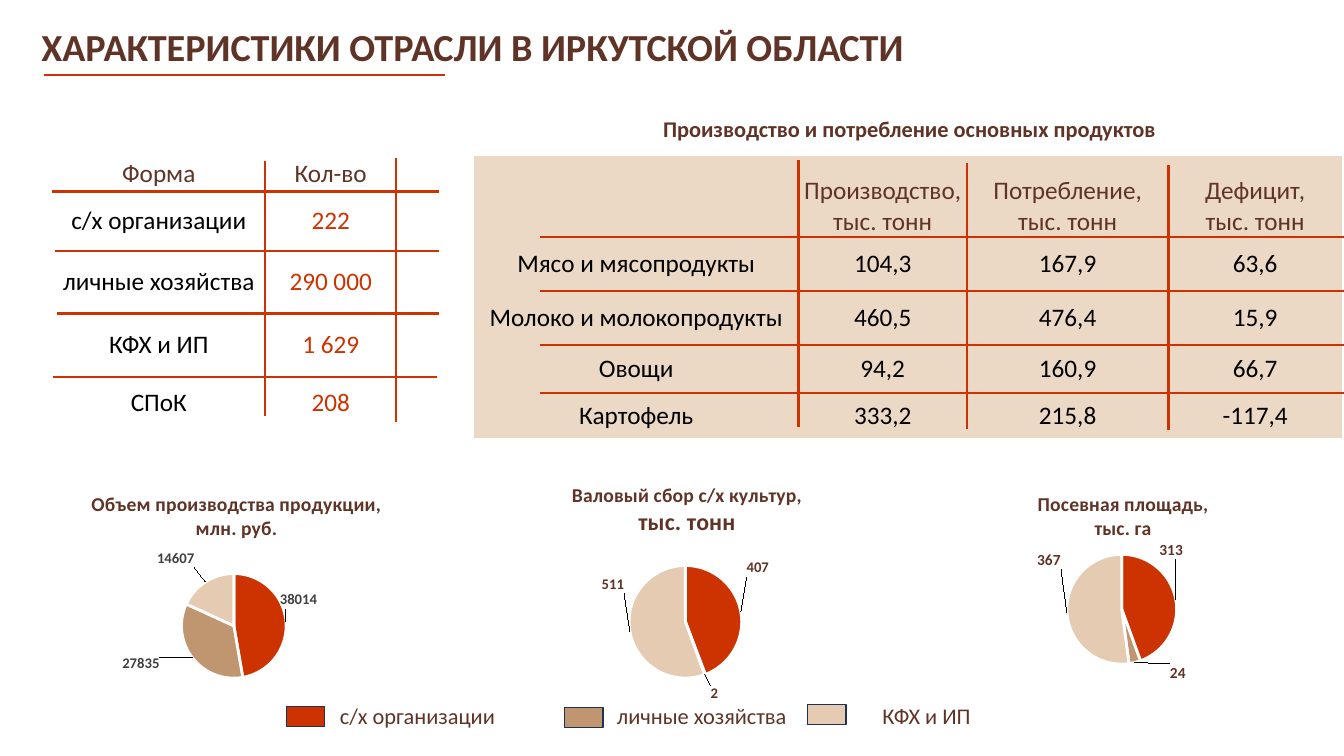
from lxml import etree
from pptx import Presentation
from pptx.chart.data import CategoryChartData
from pptx.dml.color import RGBColor
from pptx.enum.chart import XL_CHART_TYPE as ChartType, XL_LABEL_POSITION as LabelPosition
from pptx.enum.shapes import MSO_CONNECTOR as Connector, MSO_SHAPE as Shape
from pptx.enum.text import MSO_ANCHOR as Anchor, MSO_AUTO_SIZE as AutoSize, PP_ALIGN as Align
from pptx.oxml.ns import qn
from pptx.util import Inches, Pt

FONT = "Calibri"
BROWN = RGBColor(0x5F, 0x34, 0x27)
RED = RGBColor(0xCC, 0x33, 0x00)
TAN = RGBColor(0xC0, 0x96, 0x70)
CREAM = RGBColor(0xE4, 0xCB, 0xB1)
BEIGE = RGBColor(0xEB, 0xD8, 0xC5)
NAVY = RGBColor(0x1E, 0x32, 0x56)
GRAY = RGBColor(0x40, 0x40, 0x40)
BLACK = RGBColor(0, 0, 0)
WHITE = RGBColor(255, 255, 255)
SLICE_COLORS = [RED, TAN, CREAM]
NO_TABLE_STYLE = "{2D5ABB26-0587-4C30-8999-92F81FD0307C}"

FORMS = [
    ["Форма", "Кол-во", ""],
    ["с/х организации", "222", ""],
    ["личные хозяйства", "290 000", ""],
    ["КФХ и ИП", "1 629", ""],
    ["СПоК", "208", ""],
]
PRODUCTS = [
    ["", "Производство,\nтыс. тонн", "Потребление,\nтыс. тонн", "Дефицит,\nтыс. тонн"],
    ["Мясо и мясопродукты", "104,3", "167,9", "63,6"],
    ["Молоко и молокопродукты", "460,5", "476,4", "15,9"],
    ["Овощи", "94,2", "160,9", "66,7"],
    ["Картофель", "333,2", "215,8", "-117,4"],
]
FORM_RULES = [
    (0.52, 1.9, 4.35, 1.9), (0.55, 2.49, 4.35, 2.49),
    (0.57, 3.11, 4.35, 3.11), (0.53, 3.74, 4.33, 3.74),
    (2.63, 4.13, 2.63, 1.6), (3.93, 4.19, 3.93, 1.57),
]
PRODUCT_RULES = [(5.36, y, 13.33, y) for y in (2.35, 2.89, 3.42, 3.9)] + [
    (7.92, 4.24, 7.92, 1.59), (9.59, 4.26, 9.59, 1.62), (11.59, 4.27, 11.59, 1.64),
]
LEGEND = [
    ("с/х организации", RED, 2.84, 7.01, 3.08),
    ("личные хозяйства", TAN, 5.6, 7.02, 5.9),
    ("КФХ и ИП", CREAM, 8.01, 6.99, 8.13),
]


def format_font(font, size, color, bold=False):
    font.name = FONT
    font.size = Pt(size)
    font.bold = bold
    font.color.rgb = color


def add_run(paragraph, text, size, color, bold=False):
    run = paragraph.add_run()
    run.text = text
    format_font(run.font, size, color, bold)


def fill_frame(frame, lines, color, bold=False):
    for number, (text, size) in enumerate(lines):
        paragraph = frame.add_paragraph() if number else frame.paragraphs[0]
        paragraph.alignment = Align.CENTER
        add_run(paragraph, text, size, color, bold)


def add_title(slide, text):
    title = slide.shapes.title
    title.left, title.top = Inches(0.31), Inches(0.23)
    title.width, title.height = Inches(9.36), Inches(0.51)
    frame = title.text_frame
    frame.auto_size = AutoSize.NONE
    frame.vertical_anchor = Anchor.MIDDLE
    paragraph = frame.paragraphs[0]
    paragraph.alignment = Align.LEFT
    paragraph.line_spacing = 0.9
    add_run(paragraph, text, 27.3, BROWN, True)


def add_label(slide, text, left, top, width, bold=False):
    box = slide.shapes.add_textbox(Inches(left), Inches(top), Inches(width), Inches(0.37))
    box.text_frame.word_wrap = True
    fill_frame(box.text_frame, [(text, 16)], BROWN, bold)


def add_rule(slide, x1, y1, x2, y2):
    rule = slide.shapes.add_connector(
        Connector.STRAIGHT, Inches(x1), Inches(y1), Inches(x2), Inches(y2))
    rule.line.color.rgb = RED
    rule.line.width = Pt(1.5)
    etree.SubElement(rule._element.spPr, qn("a:effectLst"))


def add_swatch(slide, color, left, top):
    swatch = slide.shapes.add_shape(
        Shape.RECTANGLE, Inches(left), Inches(top), Inches(0.38), Inches(0.2))
    swatch.shadow.inherit = False
    swatch.fill.solid()
    swatch.fill.fore_color.rgb = color
    swatch.line.color.rgb = NAVY
    swatch.line.width = Pt(1)


def add_grid(slide, rows, edges_x, edges_y, value_color, header_anchor, fill=None):
    table = slide.shapes.add_table(
        len(rows), len(rows[0]), Inches(edges_x[0]), Inches(edges_y[0]),
        Inches(edges_x[-1] - edges_x[0]), Inches(edges_y[-1] - edges_y[0])).table
    table.first_row = False
    table.horz_banding = False
    table._tbl.tblPr.find(qn("a:tableStyleId")).text = NO_TABLE_STYLE
    for column, start, end in zip(table.columns, edges_x, edges_x[1:]):
        column.width = Inches(end - start)
    for row, start, end in zip(table.rows, edges_y, edges_y[1:]):
        row.height = Inches(end - start)
    for row_index, row in enumerate(rows):
        for column_index, text in enumerate(row):
            cell = table.cell(row_index, column_index)
            cell.margin_left = cell.margin_right = 0
            cell.margin_top = cell.margin_bottom = 0
            cell.vertical_anchor = Anchor.MIDDLE if row_index else header_anchor
            if fill is None:
                cell.fill.background()
            else:
                cell.fill.solid()
                cell.fill.fore_color.rgb = fill
            color = BROWN if row_index == 0 else value_color if column_index else BLACK
            if text:
                fill_frame(cell.text_frame, [(line, 18) for line in text.split("\n")], color)


def set_layout(parent, index, **values):
    for existing in parent.findall(qn("c:layout")):
        parent.remove(existing)
    layout = etree.Element(qn("c:layout"))
    manual = etree.SubElement(layout, qn("c:manualLayout"))
    for name, value in values.items():
        etree.SubElement(manual, qn("c:" + name)).set("val", str(value))
    parent.insert(index, layout)


def add_pie(slide, area, values, title_lines, title_at, pie, label_size, label_color, offsets):
    left, top, width, height = area
    data = CategoryChartData()
    data.categories = ["1", "2", "3"]
    data.add_series("Series 1", values)
    chart = slide.shapes.add_chart(
        ChartType.PIE, *[Inches(length) for length in area], data).chart
    chart.has_legend = False
    format_font(chart.font, 10, BLACK)
    fill_frame(chart.chart_title.text_frame, title_lines, BROWN, True)
    set_layout(chart._chartSpace.xpath("c:chart/c:title")[0], 1,
               xMode="edge", yMode="edge", x=title_at[0], y=title_at[1])
    pie_left, pie_top, diameter = pie
    set_layout(chart._chartSpace.xpath("c:chart/c:plotArea")[0], 0,
               layoutTarget="inner", xMode="edge", yMode="edge",
               x=round((pie_left - left) / width, 3), y=round((pie_top - top) / height, 3),
               w=round(diameter / width, 3), h=round(diameter / height, 3))
    plot = chart.plots[0]
    plot.vary_by_categories = True
    series = plot.series[0]
    labels = series.data_labels
    labels.show_value = True
    labels.number_format = "0"
    labels.number_format_is_linked = False
    format_font(labels.font, label_size, label_color, True)
    for index, (color, (x, y)) in enumerate(zip(SLICE_COLORS, offsets)):
        point = series.points[index]
        point.format.fill.solid()
        point.format.fill.fore_color.rgb = color
        point.format.line.color.rgb = WHITE
        point.format.line.width = Pt(2)
        label = point.data_label
        format_font(label.font, label_size, label_color, True)
        label.position = LabelPosition.OUTSIDE_END
        set_layout(label._get_or_add_dLbl(), 1, x=x, y=y)


def main():
    presentation = Presentation()
    presentation.slide_width = Inches(13.33)
    presentation.slide_height = Inches(7.5)
    slide = presentation.slides.add_slide(presentation.slide_layouts[5])
    add_title(slide, "ХАРАКТЕРИСТИКИ ОТРАСЛИ В ИРКУТСКОЙ ОБЛАСТИ")
    add_label(slide, "Производство и потребление основных продуктов", 4.88, 1.09, 8.28, True)
    add_grid(slide, FORMS, [0.52, 2.63, 3.93, 4.35], [1.56, 1.9, 2.49, 3.11, 3.74, 4.25],
             RED, Anchor.MIDDLE)
    add_grid(slide, PRODUCTS, [4.7, 7.92, 9.59, 11.59, 13.31],
             [1.55, 2.35, 2.89, 3.42, 3.9, 4.35], BLACK, Anchor.BOTTOM, BEIGE)
    for rule in [(0.44, 0.74, 4.41, 0.74)] + FORM_RULES + PRODUCT_RULES:
        add_rule(slide, *rule)
    add_pie(slide, (0.36, 4.68, 3.98, 2.29), (38014, 27835, 14607),
            [("Объем производства продукции,", 14), ("млн. руб.", 14)], (0.13, 0.07),
            (1.8, 5.69, 1.04), 10.5, GRAY, [(-0.03, -0.09), (-0.07, -0.03), (-0.02, -0.04)])
    add_pie(slide, (9.26, 4.68, 3.71, 2.29), (313, 24, 367),
            [("Посевная площадь,", 14), ("тыс. га", 14)], (0.27, 0.07),
            (10.58, 5.5, 1.09), 11, BROWN, [(-0.06, -0.17), (0.09, -0.02), (0, -0.23)])
    add_pie(slide, (4.99, 4.59, 3.62, 2.56), (407, 2, 511),
            [("Валовый сбор с/х культур,", 14), ("тыс. тонн", 17)], (0.18, 0.06),
            (6.24, 5.61, 1.12), 10.5, BROWN, [(0, -0.13), (0.01, 0.02), (0, -0.22)])
    for text, color, swatch_left, swatch_top, text_left in LEGEND:
        add_swatch(slide, color, swatch_left, swatch_top)
        add_label(slide, text, text_left, 6.92, 2.12)
    presentation.save("out.pptx")


if __name__ == "__main__":
    main()
